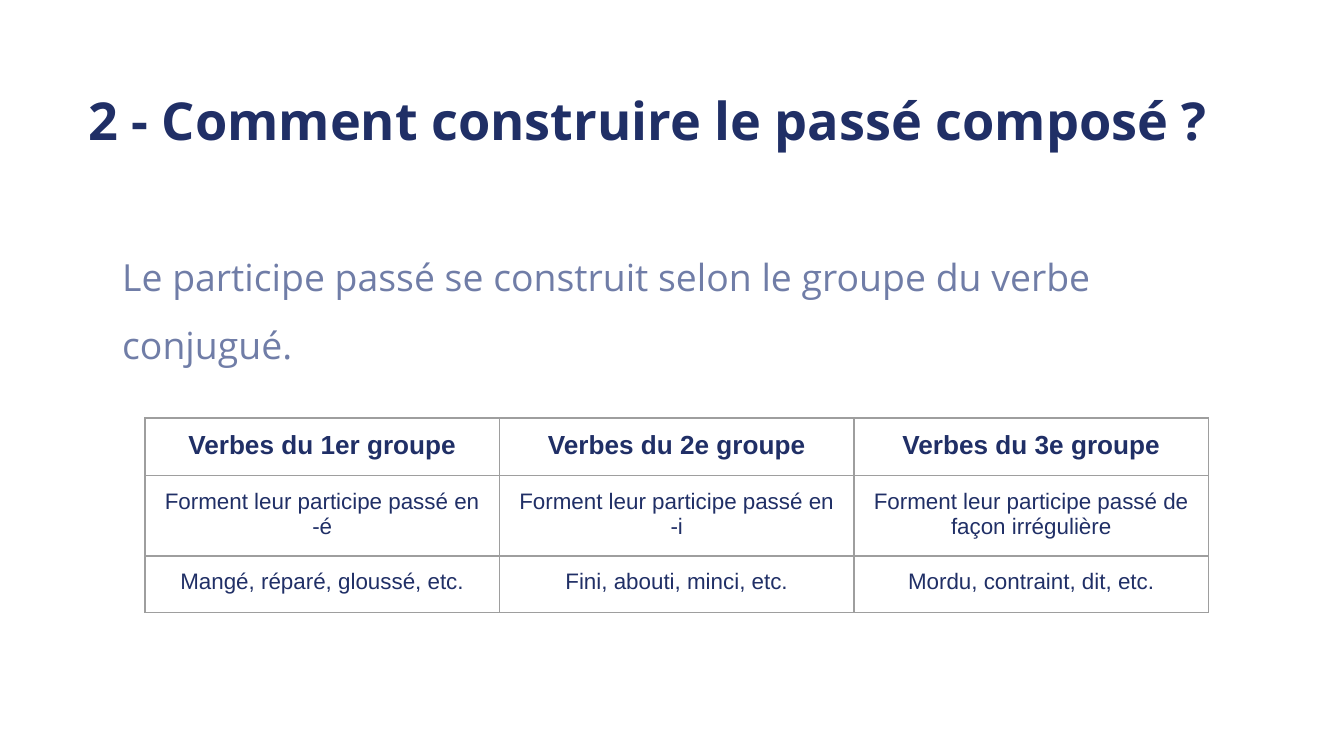
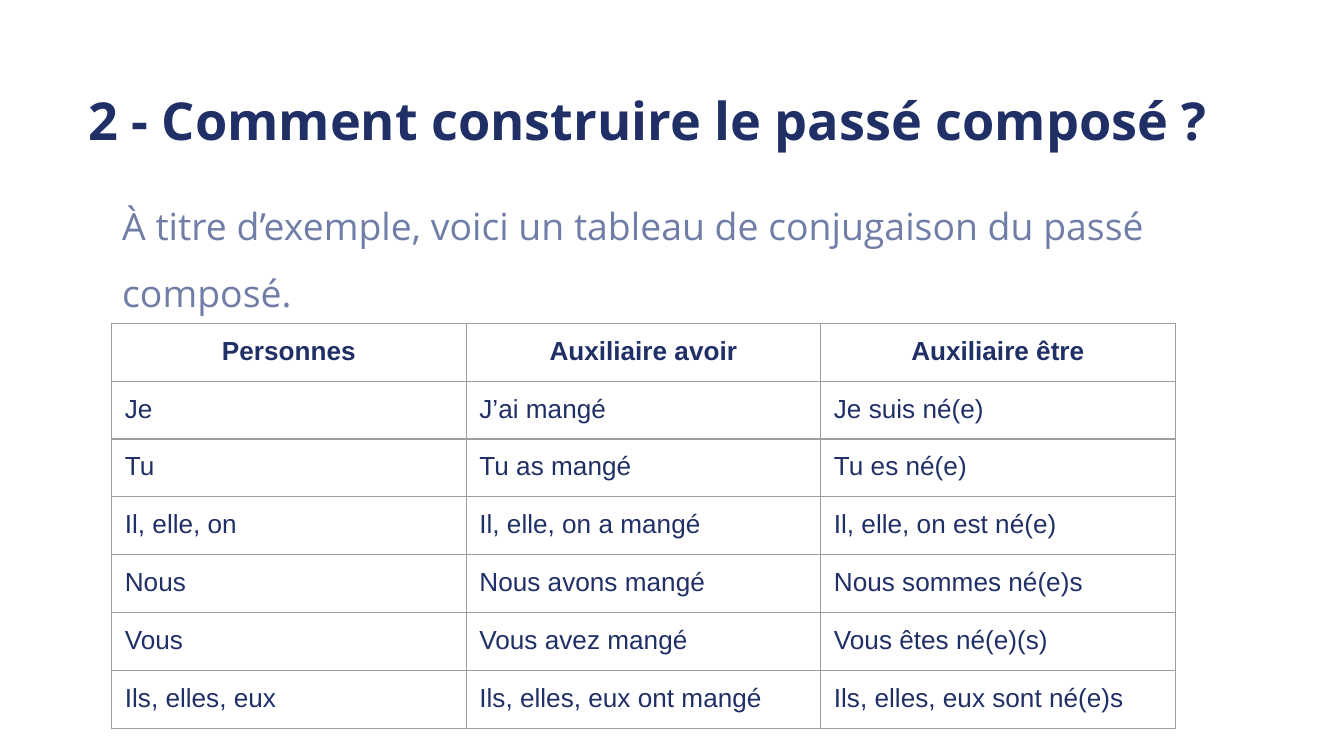
from dataclasses import dataclass

from lxml.etree import SubElement
from pptx import Presentation
from pptx.dml.color import RGBColor
from pptx.enum.text import MSO_ANCHOR, PP_ALIGN
from pptx.oxml.ns import qn
from pptx.slide import Slide
from pptx.table import _Cell
from pptx.util import Cm, Length, Pt

# Shared style
NAVY = RGBColor(0x20, 0x2F, 0x66)
SLATE = RGBColor(0x70, 0x7D, 0xA7)
GREY = RGBColor(0x9E, 0x9E, 0x9E)
WHITE = RGBColor(0xFF, 0xFF, 0xFF)
HEADING_FONT = "Open Sans"
TABLE_FONT = "Arial"
INSET = Cm(0.25)
COLUMN_WIDTH = Cm(6.7)
ROW_HEIGHT = Cm(1.06)
HEADER_SIZE = 14
TITLE = "2 - Comment construire le passé composé ?"


@dataclass(frozen=True)
class TextStyle:
    font: str
    size: int
    color: RGBColor
    bold: bool = False
    line_spacing: float | None = None
    align: PP_ALIGN = PP_ALIGN.LEFT
    anchor: MSO_ANCHOR = MSO_ANCHOR.TOP


@dataclass(frozen=True)
class Box:
    left: Length
    top: Length
    width: Length
    height: Length


@dataclass(frozen=True)
class Lesson:
    intro: str
    intro_box: Box
    table_left: Length
    table_top: Length
    body_size: int
    body_align: PP_ALIGN
    rows: list[tuple[str, str, str]]


TITLE_BOX = Box(Cm(1.42), Cm(0.89), Cm(22.76), Cm(2.21))
TITLE_STYLE = TextStyle(HEADING_FONT, 28, NAVY, bold=True, anchor=MSO_ANCHOR.BOTTOM)
INTRO_STYLE = TextStyle(HEADING_FONT, 20, SLATE, line_spacing=1.5)
HEADER_STYLE = TextStyle(TABLE_FONT, HEADER_SIZE, NAVY, bold=True, align=PP_ALIGN.CENTER)

# Content of the two slides
LESSONS = [
    Lesson(
        "Le participe passé se construit selon le groupe du verbe conjugué.",
        Box(Cm(2.06), Cm(4.14), Cm(21.31), Cm(10.36)),
        Cm(2.74), Cm(7.9), 12, PP_ALIGN.CENTER,
        [
            ("Verbes du 1er groupe", "Verbes du 2e groupe", "Verbes du 3e groupe"),
            ("Forment leur participe passé en -é",
             "Forment leur participe passé en -i",
             "Forment leur participe passé de façon irrégulière"),
            ("Mangé, réparé, gloussé, etc.",
             "Fini, abouti, minci, etc.",
             "Mordu, contraint, dit, etc."),
        ],
    ),
    Lesson(
        "À titre d’exemple, voici un tableau de conjugaison du passé composé.",
        Box(Cm(2.06), Cm(3.17), Cm(21.31), Cm(2.49)),
        Cm(2.11), Cm(6.11), 14, PP_ALIGN.LEFT,
        [
            ("Personnes", "Auxiliaire avoir", "Auxiliaire être"),
            ("Je", "J’ai mangé", "Je suis né(e)"),
            ("Tu", "Tu as mangé", "Tu es né(e)"),
            ("Il, elle, on", "Il, elle, on a mangé", "Il, elle, on est né(e)"),
            ("Nous", "Nous avons mangé", "Nous sommes né(e)s"),
            ("Vous", "Vous avez mangé", "Vous êtes né(e)(s)"),
            ("Ils, elles, eux", "Ils, elles, eux ont mangé", "Ils, elles, eux sont né(e)s"),
        ],
    ),
]


def write(frame, text: str, style: TextStyle) -> None:
    """Fill a text frame with one styled paragraph."""
    paragraph = frame.paragraphs[0]
    paragraph.text = text
    paragraph.alignment = style.align
    if style.line_spacing:
        paragraph.line_spacing = style.line_spacing
    paragraph.font.name = style.font
    paragraph.font.size = Pt(style.size)
    paragraph.font.bold = style.bold
    paragraph.font.color.rgb = style.color


def add_text(slide: Slide, box: Box, text: str, style: TextStyle) -> None:
    frame = slide.shapes.add_textbox(box.left, box.top, box.width, box.height).text_frame
    frame.word_wrap = True
    frame.vertical_anchor = style.anchor
    frame.margin_left = frame.margin_right = INSET
    frame.margin_top = frame.margin_bottom = INSET
    write(frame, text, style)


def add_borders(cell: _Cell) -> None:
    properties = cell._tc.get_or_add_tcPr()
    for side in ("a:lnL", "a:lnR", "a:lnT", "a:lnB"):
        line = SubElement(properties, qn(side), w=str(Pt(0.75)))
        fill = SubElement(line, qn("a:solidFill"))
        SubElement(fill, qn("a:srgbClr"), val=str(GREY))


def add_verb_table(slide: Slide, lesson: Lesson) -> None:
    row_count, column_count = len(lesson.rows), len(lesson.rows[0])
    table = slide.shapes.add_table(
        row_count, column_count, lesson.table_left, lesson.table_top,
        COLUMN_WIDTH * column_count, ROW_HEIGHT * row_count,
    ).table
    table.first_row = table.horz_banding = False
    for column in table.columns:
        column.width = COLUMN_WIDTH
    body_style = TextStyle(TABLE_FONT, lesson.body_size, NAVY, align=lesson.body_align)
    for r, row in enumerate(lesson.rows):
        table.rows[r].height = ROW_HEIGHT
        for c, text in enumerate(row):
            cell = table.cell(r, c)
            cell.margin_left = cell.margin_right = INSET
            cell.margin_top = cell.margin_bottom = INSET
            add_borders(cell)
            cell.fill.background()
            write(cell.text_frame, text, body_style if r else HEADER_STYLE)


def main() -> None:
    deck = Presentation()
    deck.slide_width, deck.slide_height = Cm(25.4), Cm(14.29)
    for lesson in LESSONS:
        slide = deck.slides.add_slide(deck.slide_layouts[6])
        slide.background.fill.solid()
        slide.background.fill.fore_color.rgb = WHITE
        add_text(slide, TITLE_BOX, TITLE, TITLE_STYLE)
        add_text(slide, lesson.intro_box, lesson.intro, INTRO_STYLE)
        add_verb_table(slide, lesson)
    deck.save("out.pptx")


if __name__ == "__main__":
    main()
